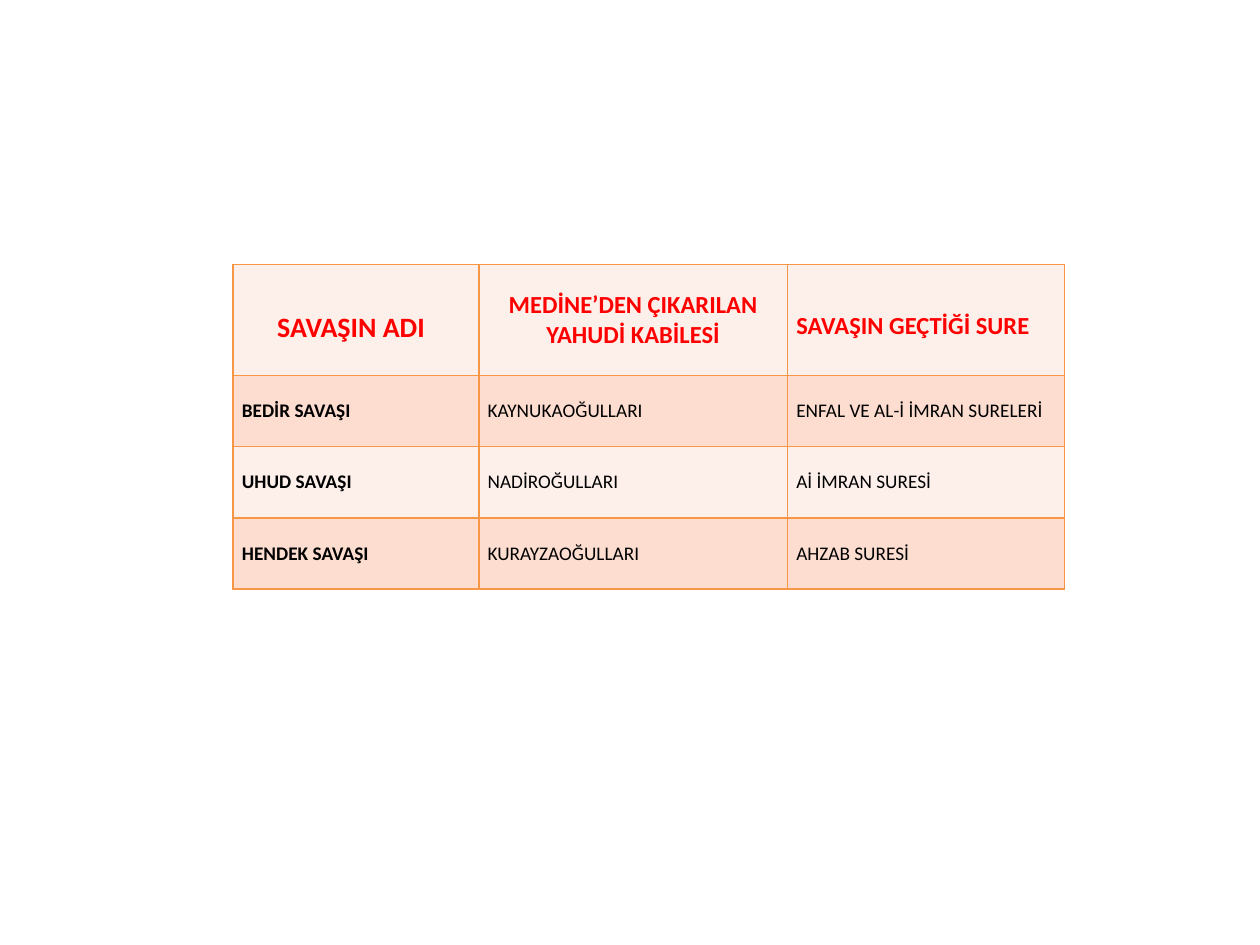
import pptx
import pptx.dml.color
import pptx.enum.text
import pptx.oxml
import pptx.oxml.ns
import pptx.util

SLIDE_SIZE = (10, 7.5)
TABLE_ORIGIN = (1.85, 2.1)
COLUMN_WIDTHS = (1.95, 2.45, 2.2)
HEADER_HEIGHT, BODY_HEIGHT = 0.88, 0.565
SIDE_MARGIN = 0.07
BORDER = "F79646"
BANDS = ("FDEFE9", "FCDDCF")
LEFT = pptx.enum.text.PP_ALIGN.LEFT
CENTER = pptx.enum.text.PP_ALIGN.CENTER

HEADERS = [
    {"text": "SAVAŞIN ADI", "size": 16, "indent": 0.28, "drop": 0.13},
    {"text": "MEDİNE’DEN ÇIKARILAN\nYAHUDİ KABİLESİ", "size": 14, "align": CENTER},
    {"text": "SAVAŞIN GEÇTİĞİ SURE", "size": 14, "drop": 0.1},
]
BATTLES = [
    ("BEDİR SAVAŞI", "KAYNUKAOĞULLARI", "ENFAL VE AL-İ İMRAN SURELERİ"),
    ("UHUD SAVAŞI", "NADİROĞULLARI", "Aİ İMRAN SURESİ"),
    ("HENDEK SAVAŞI", "KURAYZAOĞULLARI", "AHZAB SURESİ"),
]


def color(value):
    return pptx.dml.color.RGBColor.from_string(value)


def add_borders(cell):
    properties = cell._tc.get_or_add_tcPr()
    for side in ("lnL", "lnR", "lnT", "lnB"):
        properties.append(pptx.oxml.parse_xml(
            f'<a:{side} {pptx.oxml.ns.nsdecls("a")} w="12700"><a:solidFill>'
            f'<a:srgbClr val="{BORDER}"/></a:solidFill></a:{side}>'))


def fill_cell(cell, band, text, size, bold, text_color, align=LEFT, indent=0, drop=0):
    add_borders(cell)
    cell.fill.solid()
    cell.fill.fore_color.rgb = color(band)
    cell.vertical_anchor = pptx.enum.text.MSO_ANCHOR.MIDDLE
    cell.margin_left = pptx.util.Inches(SIDE_MARGIN + indent)
    cell.margin_right = pptx.util.Inches(SIDE_MARGIN)
    cell.margin_top = pptx.util.Inches(drop)
    cell.margin_bottom = 0
    cell.text = text
    for paragraph in cell.text_frame.paragraphs:
        paragraph.alignment = align
        paragraph.font.name = "Calibri"
        paragraph.font.size = pptx.util.Pt(size)
        paragraph.font.bold = bold
        paragraph.font.color.rgb = color(text_color)


def main():
    presentation = pptx.Presentation()
    presentation.slide_width, presentation.slide_height = map(pptx.util.Inches, SLIDE_SIZE)
    slide = presentation.slides.add_slide(presentation.slide_layouts[6])

    heights = [HEADER_HEIGHT] + [BODY_HEIGHT] * len(BATTLES)
    frame = (*TABLE_ORIGIN, sum(COLUMN_WIDTHS), sum(heights))
    table = slide.shapes.add_table(
        len(heights), len(COLUMN_WIDTHS), *map(pptx.util.Inches, frame)).table
    for column, width in zip(table.columns, COLUMN_WIDTHS):
        column.width = pptx.util.Inches(width)
    for row, height in zip(table.rows, heights):
        row.height = pptx.util.Inches(height)

    for column, header in enumerate(HEADERS):
        fill_cell(table.cell(0, column), BANDS[0], bold=True, text_color="FF0000", **header)
    for row, battle in enumerate(BATTLES, start=1):
        for column, text in enumerate(battle):
            fill_cell(table.cell(row, column), BANDS[row % 2], text,
                      size=11, bold=column == 0, text_color="000000")

    presentation.save("out.pptx")


if __name__ == "__main__":
    main()
